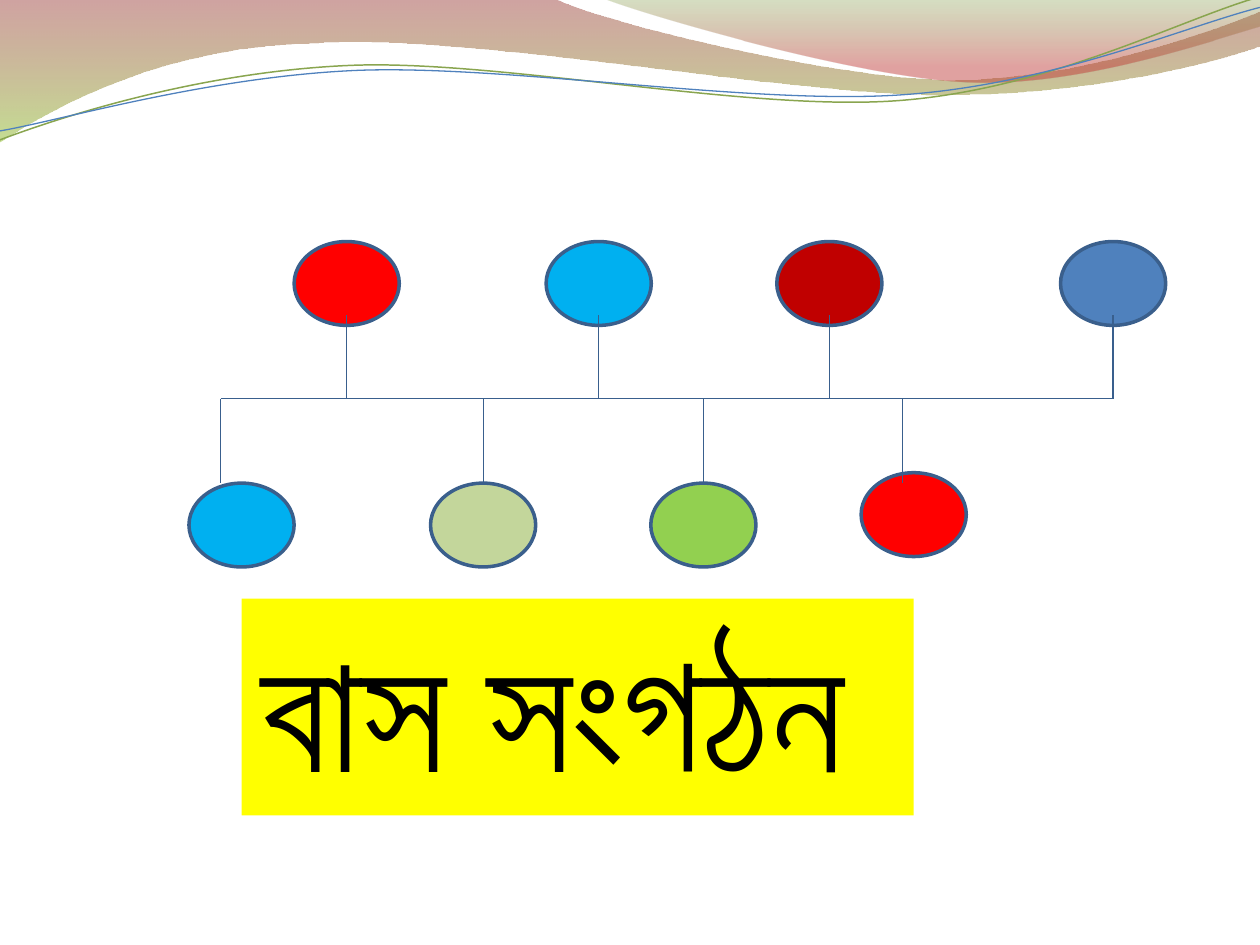
from lxml import etree
from pptx import Presentation
from pptx import util as u
from pptx.dml.color import RGBColor
from pptx.enum import shapes, text
from pptx.oxml.ns import qn

YELLOW = RGBColor(0xFF, 0xFF, 0x00)
BLACK = RGBColor(0x00, 0x00, 0x00)
RED = RGBColor(0xFF, 0x00, 0x00)
DARK_RED = RGBColor(0xC0, 0x00, 0x00)
SKY = RGBColor(0x00, 0xB0, 0xF0)
BLUE = RGBColor(0x4F, 0x81, 0xBD)
SAGE = RGBColor(0xC3, 0xD6, 0x9B)
GREEN = RGBColor(0x92, 0xD0, 0x50)
OUTLINE = RGBColor(0x3A, 0x5F, 0x8C)
WIRE = RGBColor(0x39, 0x5F, 0x8D)
CURVE_GREEN = RGBColor(0x89, 0xA5, 0x4F)
WAVE_RED = RGBColor(0x97, 0x33, 0x30)
WAVE_LIME = RGBColor(0x95, 0xC2, 0x38)
WAVE_OLIVE = RGBColor(0x76, 0x95, 0x37)
WAVE_ROSE = RGBColor(0xBE, 0x33, 0x30)

NODE_W, NODE_H = 2.12, 1.69
BUS_Y, STUB = 8.04, 1.69


class Deck:
    def __init__(self):
        self.prs = Presentation()
        self.prs.slide_width, self.prs.slide_height = u.Cm(25.4), u.Cm(19.05)
        self.s = self.prs.slides.add_slide(self.prs.slide_layouts[6])

    def freeform(self, start, steps, close):
        """Steps are lines (x, y) or cubic curves (x1, y1, x2, y2, x, y)."""
        fb = self.s.shapes.build_freeform(u.Cm(start[0]), u.Cm(start[1]))
        fb.add_line_segments([(u.Cm(st[-2]), u.Cm(st[-1])) for st in steps], close=close)
        sp = fb.convert_to_shape()
        sp.shadow.inherit = False
        # Turn the segments that have control points into curves
        for seg, st in zip(list(sp.element.spPr.iter(qn("a:lnTo"))), steps):
            if len(st) == 6:
                seg.tag = qn("a:cubicBezTo")
                for i in (0, 1):
                    pt = etree.Element(qn("a:pt"))
                    pt.set("x", str(u.Cm(st[2 * i]) - sp.left))
                    pt.set("y", str(u.Cm(st[2 * i + 1]) - sp.top))
                    seg.insert(i, pt)
        return sp

    def wave(self, start, steps, stops):
        sp = self.freeform(start, steps, True)
        sp.line.fill.background()
        sp.fill.gradient()
        sp.fill.gradient_angle = 270
        for stop, (pos, color, _) in zip(sp.fill.gradient_stops, stops):
            stop.position, stop.color.rgb = pos, color
        for clr, (_, _, opacity) in zip(sp.element.spPr.iter(qn("a:srgbClr")), stops):
            etree.SubElement(clr, qn("a:alpha")).set("val", str(opacity * 1000))

    def curve(self, start, steps, color, width):
        sp = self.freeform(start, steps, False)
        sp.fill.background()
        sp.line.color.rgb, sp.line.width = color, u.Pt(width)

    def shape(self, kind, x, y, w, h, color):
        sp = self.s.shapes.add_shape(kind, u.Cm(x), u.Cm(y), u.Cm(w), u.Cm(h))
        sp.shadow.inherit = False
        sp.fill.solid()
        sp.fill.fore_color.rgb = color
        return sp

    def node(self, x, y, color):
        sp = self.shape(shapes.MSO_SHAPE.OVAL, x, y, NODE_W, NODE_H, color)
        sp.line.color.rgb, sp.line.width = OUTLINE, u.Pt(2)
        return sp

    def line(self, x1, y1, x2, y2):
        c = self.s.shapes.add_connector(
            shapes.MSO_CONNECTOR.STRAIGHT, u.Cm(x1), u.Cm(y1), u.Cm(x2), u.Cm(y2))
        c.line.color.rgb, c.line.width = WIRE, u.Pt(0.75)
        etree.SubElement(c.element.spPr, qn("a:effectLst"))
        return c

    def caption(self, x, y, w, h, runs):
        sp = self.shape(shapes.MSO_SHAPE.RECTANGLE, x, y, w, h, YELLOW)
        sp.line.fill.background()
        tf = sp.text_frame
        tf.word_wrap = True
        tf.auto_size = text.MSO_AUTO_SIZE.SHAPE_TO_FIT_TEXT
        tf.vertical_anchor = text.MSO_ANCHOR.TOP
        p = tf.paragraphs[0]
        p.alignment = text.PP_ALIGN.LEFT
        for words, font, size in runs:
            r = p.add_run()
            r.text, r.font.name, r.font.size = words, font, u.Pt(size)
            r.font.color.rgb = BLACK


def main():
    d = Deck()

    # Waves and thin curves across the top
    d.wave((0, 0), [
        (11.18, -0.03),
        (12.09, 0.43, 16.87, 1.6, 19.25, 1.6),
        (21.67, 1.6, 24.33, 0.66, 25.4, 0.23),
        (25.43, 0.91),
        (24.97, 1.12, 22.1, 1.93, 18.95, 1.91),
        (15.8, 1.91, 9.7, 0.71, 6.53, 0.86),
        (3.28, 0.91, 1.17, 2.11, -0.03, 2.87),
        (0, 0),
    ], [(0, WAVE_RED, 45), (1, WAVE_LIME, 55)])
    d.wave((12.17, -0.03), [
        (12.93, 0.28, 17.32, 1.57, 19.53, 1.65),
        (21.74, 1.75, 24.41, 0.81, 25.4, 0.53),
        (25.4, 0),
        (12.17, -0.03),
    ], [(0, WAVE_OLIVE, 30), (0.8, WAVE_ROSE, 45)])
    d.curve((0, 2.82), [
        (1.22, 2.36, 4.01, 1.45, 7.04, 1.32),
        (10.03, 1.19, 15.06, 2.26, 18.11, 2.03),
        (21.16, 1.8, 23.83, 0.38, 25.35, -0.05),
    ], CURVE_GREEN, 0.85)
    d.curve((0, 2.64), [
        (1.19, 2.44, 4.17, 1.55, 7.19, 1.42),
        (10.24, 1.3, 15.16, 2.13, 18.21, 1.91),
        (21.23, 1.7, 23.9, 0.53, 25.4, 0.15),
    ], BLUE, 0.75)

    # Bus line
    d.line(4.45, BUS_Y, 22.44, BUS_Y)

    # Nodes above the bus, each with a stub from its centre line
    for x, color in ((5.93, RED), (11.01, SKY), (15.66, DARK_RED), (21.38, BLUE)):
        d.node(x, 4.87, color)
        d.line(x + NODE_W / 2, BUS_Y - STUB, x + NODE_W / 2, BUS_Y)

    # Nodes below the bus; a stub on the centre line is joined to its node
    for x, y, color, stub_x in ((3.81, 9.74, SKY, 4.45), (8.68, 9.74, SAGE, 9.74),
                                (13.12, 9.74, GREEN, 14.18), (17.36, 9.53, RED, 18.2)):
        sp = d.node(x, y, color)
        c = d.line(stub_x, BUS_Y, stub_x, BUS_Y + STUB)
        if abs(stub_x - x - NODE_W / 2) < 0.01:
            c.end_connect(sp, 0)

    # Caption
    d.caption(4.87, 12.07, 13.55, 4.37,
              [(" ", "Cambria", 18), ("বাস সংগঠন", "Arial", 96)])

    d.prs.save("out.pptx")


if __name__ == "__main__":
    main()
